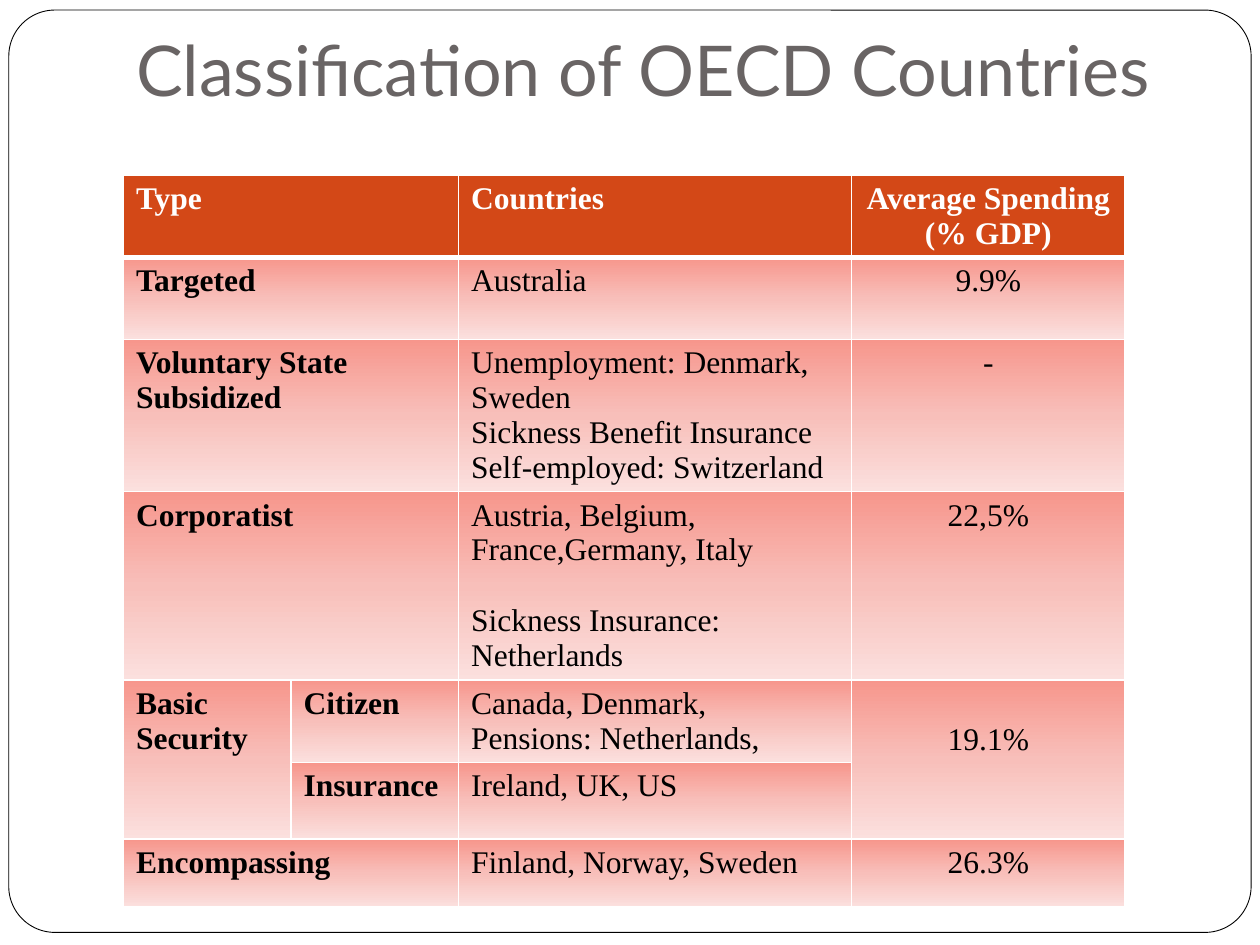
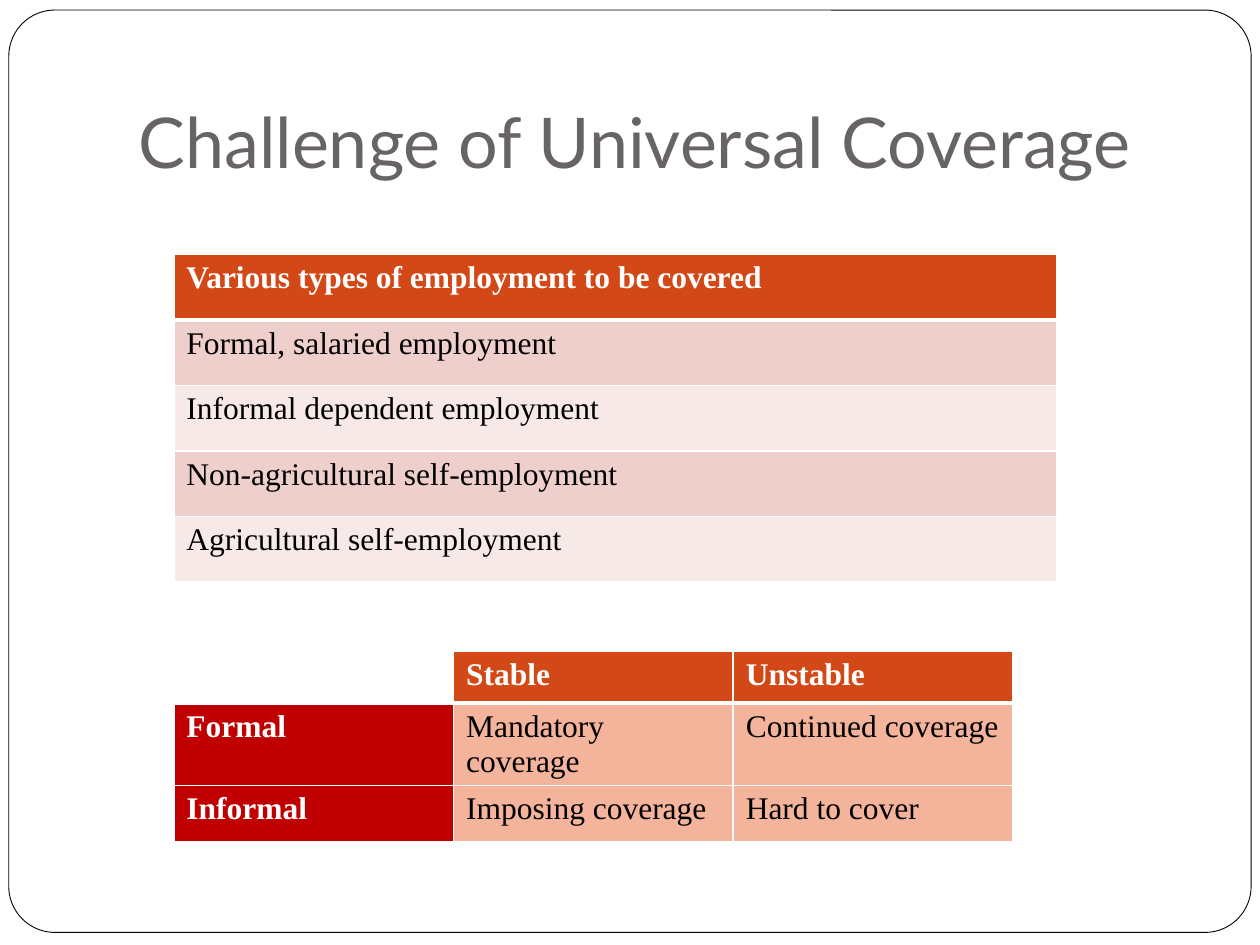
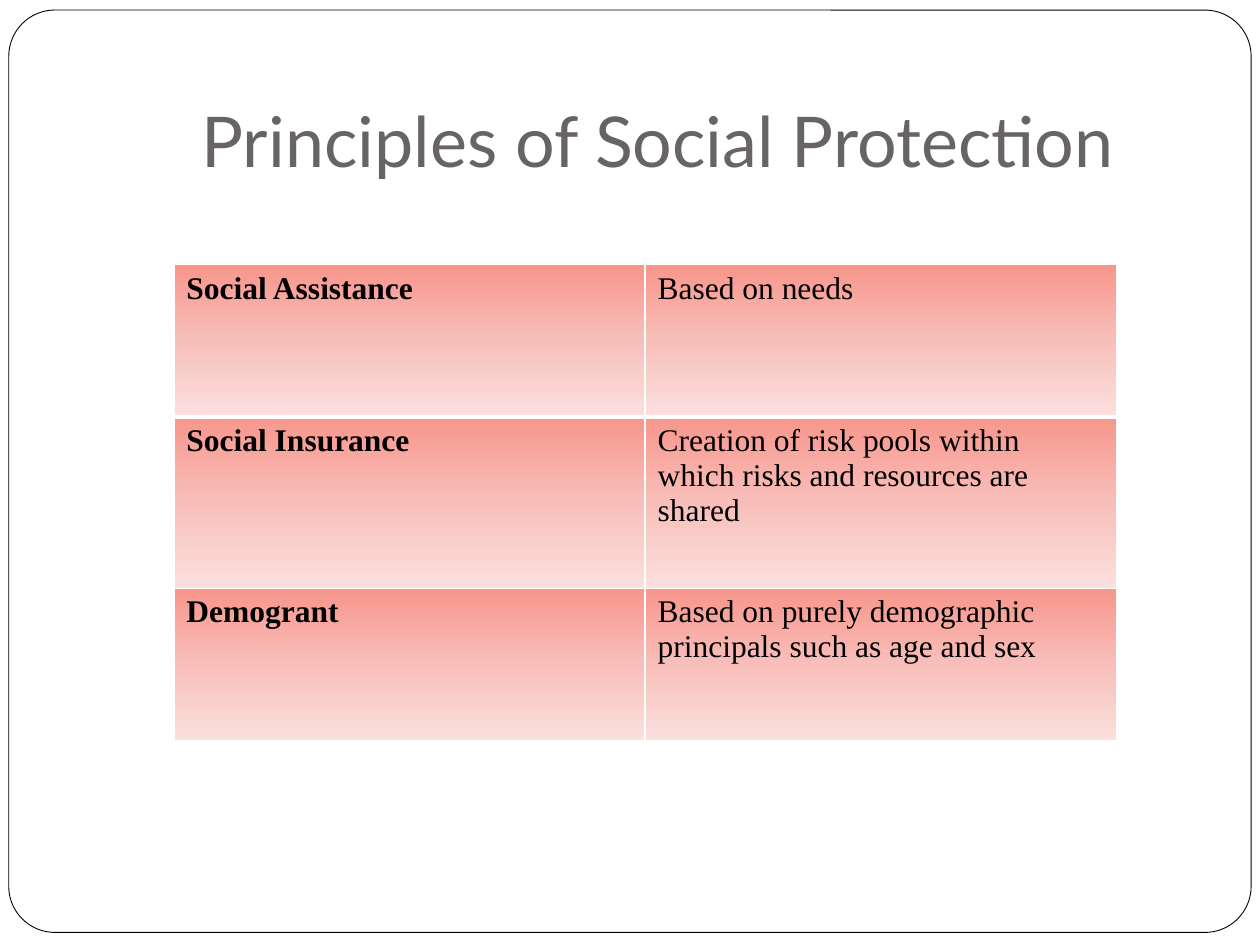
"""Build three slides on social protection with titles and styled tables."""
from dataclasses import dataclass

from pptx import Presentation
from pptx.dml.color import RGBColor
from pptx.enum.shapes import MSO_SHAPE
from pptx.enum.text import MSO_ANCHOR, MSO_AUTO_SIZE, PP_ALIGN
from pptx.oxml import parse_xml
from pptx.oxml.ns import nsdecls
from pptx.util import Emu, Pt

PX = 9144
WHITE, BLACK, GREY = "FFFFFF", "000000", "696464"
ORANGE, PEACH, RED = "D34817", "F4B39B", "C00000"
PINK, PALE_PINK = "EFCFCC", "F7E9E8"
BLUSH = ("F7968C", "F8BFBA", "FBE0DE")
TITLE_FONT, TABLE_FONT = "Lato", "Times New Roman"
LINE_GAP = Pt(20.7)


@dataclass(frozen=True)
class Style:
    fill: str | tuple[str, ...]
    color: str = BLACK
    bold: bool = False


HEADER = Style(ORANGE, WHITE, True)
EMPTY = Style(WHITE)
BLUSH_BODY = Style(BLUSH)
BLUSH_LABEL = Style(BLUSH, bold=True)


@dataclass(frozen=True)
class Grid:
    left: int
    top: int
    cols: list[int]
    rows: list[int]
    cells: list[list[str]]
    bodies: tuple[Style, ...]
    label: Style = BLUSH_LABEL
    label_cols: int = 1
    has_header: bool = True
    centred_col: int = -1
    merges: tuple[tuple[int, int, int, int], ...] = ()
    spaced: tuple[tuple[int, int], ...] = ()
    lowered: tuple[tuple[int, int], ...] = ()

    def style(self, row: int, col: int) -> Style:
        if row == 0 and self.has_header:
            return HEADER if self.cells[row][col] else EMPTY
        if col < self.label_cols:
            return self.label
        return self.bodies[(row - 1) % len(self.bodies)]


@dataclass(frozen=True)
class Page:
    title: str
    left: int
    top: int
    grids: tuple[Grid, ...]


PAGES = [
    Page("Classification of OECD Countries", 98, -27, (
        Grid(98, 139, [133, 133, 312, 217], [65, 65, 120, 149, 65, 61, 54], [
            ["Type", "", "Countries", "Average Spending\n(% GDP)"],
            ["Targeted", "", "Australia", "9.9%"],
            ["Voluntary State Subsidized", "",
             "Unemployment: Denmark, Sweden\n"
             "Sickness Benefit Insurance Self-employed: Switzerland", "-"],
            ["Corporatist", "",
             "Austria, Belgium, France,Germany, Italy\n"
             "Sickness Insurance: Netherlands", "22,5%"],
            ["Basic Security", "Citizen",
             "Canada, Denmark,\nPensions: Netherlands,", "19.1%"],
            ["", "Insurance", "Ireland, UK, US", ""],
            ["Encompassing", "", "Finland, Norway, Sweden", "26.3%"],
        ], (BLUSH_BODY,), label_cols=2, centred_col=3,
            merges=tuple((row, 0, row, 1) for row in (0, 1, 2, 3, 6))
            + ((4, 0, 5, 0), (4, 3, 5, 3)),
            spaced=((3, 2),), lowered=((4, 3),)),
    )),
    Page("Challenge of Universal Coverage", 100, 30, (
        Grid(138, 517, [222] * 3, [41, 65, 45], [
            ["", "Stable", "Unstable"],
            ["Formal", "Mandatory coverage", "Continued coverage"],
            ["Informal", "Imposing coverage", "Hard to cover"],
        ], (Style(PEACH),), label=Style(RED, WHITE, True)),
        Grid(138, 202, [701], [52] * 5, [
            ["Various types of employment to be covered"],
            ["Formal, salaried employment"],
            ["Informal dependent employment"],
            ["Non-agricultural self-employment"],
            ["Agricultural self-employment"],
        ], (Style(PINK), Style(PALE_PINK)), label_cols=0),
    )),
    Page("Principles of Social Protection", 150, 29, (
        Grid(138, 210, [374] * 2, [121, 136, 121], [
            ["Social Assistance", "Based on needs"],
            ["Social Insurance", "Creation of risk pools within which risks "
             "and resources are shared"],
            ["Demogrant", "Based on purely demographic principals such as "
             "age and sex"],
        ], (BLUSH_BODY,), has_header=False),
    )),
]


def px(n: int) -> Emu:
    return Emu(n * PX)


def rgb(value: str) -> RGBColor:
    return RGBColor.from_string(value)


def format_run(r, font: str, size: int, color: str, bold: bool = False) -> None:
    r.font.name, r.font.size, r.font.bold = font, Pt(size), bold
    r.font.color.rgb = rgb(color)


def add_border(cell, side: str, width: int) -> None:
    cell._tc.get_or_add_tcPr().append(parse_xml(
        f'<a:ln{side} {nsdecls("a")} w="{Pt(width)}"><a:solidFill>'
        f'<a:srgbClr val="{WHITE}"/></a:solidFill></a:ln{side}>'))


def fill_cell(cell, fill: str | tuple[str, ...]) -> None:
    if isinstance(fill, str):
        cell.fill.solid()
        cell.fill.fore_color.rgb = rgb(fill)
        return
    step = 100000 // (len(fill) - 1)
    stops = "".join(f'<a:gs pos="{i * step}"><a:srgbClr val="{color}"/></a:gs>'
                    for i, color in enumerate(fill))
    cell._tc.get_or_add_tcPr().append(parse_xml(
        f'<a:gradFill {nsdecls("a")} rotWithShape="1"><a:gsLst>{stops}</a:gsLst>'
        '<a:lin ang="5400000" scaled="0"/></a:gradFill>'))


def format_cell(cell, grid: Grid, row: int, col: int) -> None:
    style = grid.style(row, col)
    for side, width in (("L", 1), ("R", 1), ("T", 3 if row == 1 else 1),
                        ("B", 3 if row == 0 else 1)):
        add_border(cell, side, width)
    fill_cell(cell, style.fill)
    if not grid.cells[row][col]:
        return
    tf = cell.text_frame
    tf.text = grid.cells[row][col]
    for p in tf.paragraphs:
        if col == grid.centred_col:
            p.alignment = PP_ALIGN.CENTER
        for r in p.runs:
            format_run(r, TABLE_FONT, 18, style.color, style.bold)
    if (row, col) in grid.spaced:
        tf.paragraphs[-1].space_before = LINE_GAP
    if (row, col) in grid.lowered:
        cell.margin_top = px(5) + LINE_GAP


def add_grid(s, grid: Grid) -> None:
    table = s.shapes.add_table(
        len(grid.rows), len(grid.cols), px(grid.left), px(grid.top),
        px(sum(grid.cols)), px(sum(grid.rows))).table
    table.first_row, table.horz_banding = grid.has_header, False
    for column, width in zip(table.columns, grid.cols):
        column.width = px(width)
    for line, height in zip(table.rows, grid.rows):
        line.height = px(height)
    for row in range(len(grid.rows)):
        for col in range(len(grid.cols)):
            format_cell(table.cell(row, col), grid, row, col)
    for top, left, bottom, right in grid.merges:
        table.cell(top, left).merge(table.cell(bottom, right))


def set_title(s, page: Page) -> None:
    sp = s.shapes.title
    sp.left, sp.top, sp.width, sp.height = map(
        px, (page.left, page.top, 850, 125))
    tf = sp.text_frame
    tf.text = page.title
    tf.word_wrap, tf.auto_size = True, MSO_AUTO_SIZE.NONE
    tf.vertical_anchor = MSO_ANCHOR.BOTTOM
    tf.margin_left = tf.margin_right = tf.margin_bottom = px(10)
    tf.margin_top = px(5)
    p = tf.paragraphs[0]
    p.alignment = PP_ALIGN.LEFT
    format_run(p.runs[0], TITLE_FONT, 40, GREY)


def add_frame(s) -> None:
    sp = s.shapes.add_shape(MSO_SHAPE.ROUNDED_RECTANGLE,
                            px(7), px(8), px(986), px(732))
    sp.adjustments[0] = 0.05
    sp.shadow.inherit = False
    sp.fill.solid()
    sp.fill.fore_color.rgb = rgb(WHITE)
    sp.line.color.rgb = rgb(BLACK)
    sp.line.width = Pt(0.5)
    s.shapes.element.insert(2, sp.element)


def main() -> None:
    prs = Presentation()
    prs.slide_width, prs.slide_height = px(1000), px(750)
    for page in PAGES:
        s = prs.slides.add_slide(prs.slide_layouts[5])
        add_frame(s)
        set_title(s, page)
        for grid in page.grids:
            add_grid(s, grid)
    prs.save("out.pptx")


if __name__ == "__main__":
    main()
